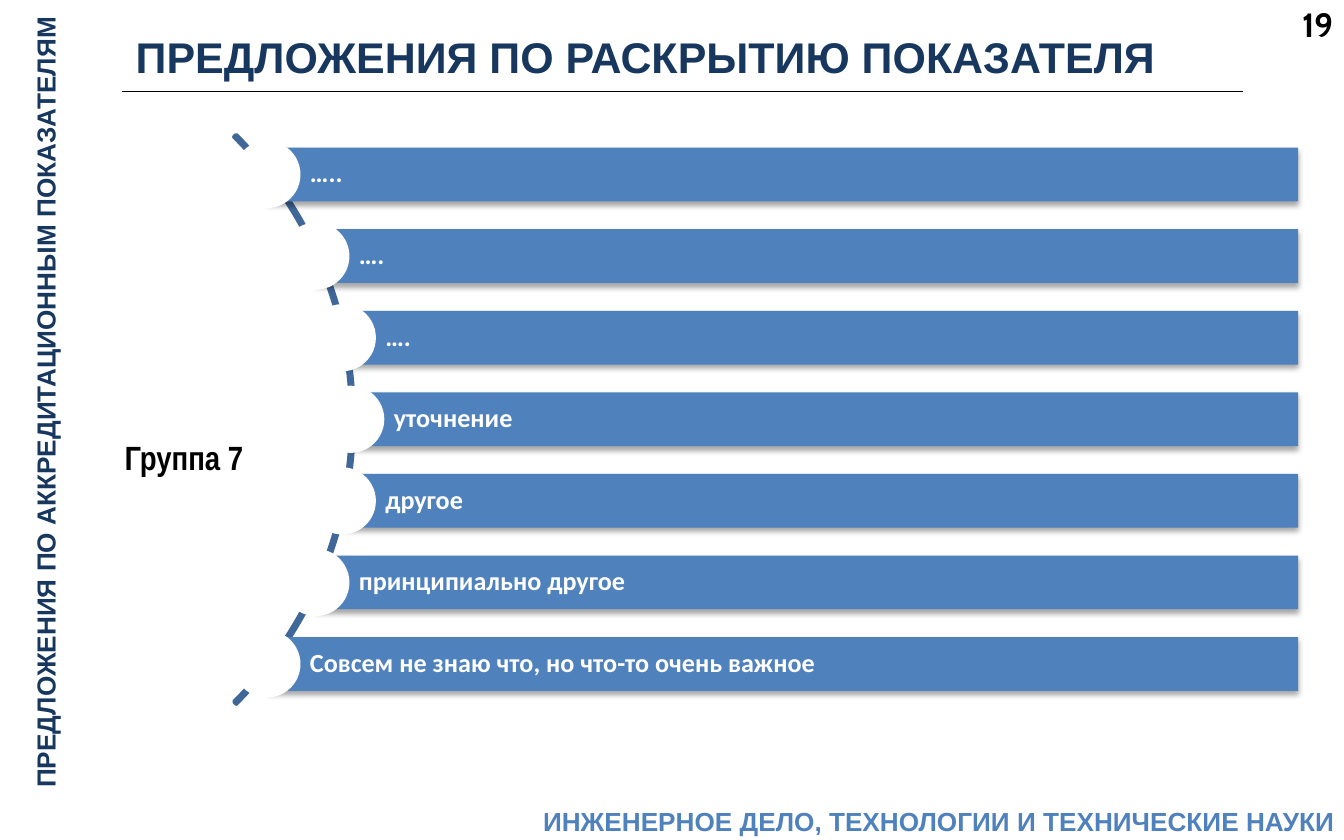
import math

from lxml import etree
from pptx import Presentation
from pptx.dml.color import RGBColor
from pptx.enum.shapes import MSO_CONNECTOR, MSO_SHAPE
from pptx.enum.text import MSO_ANCHOR, MSO_AUTO_SIZE, PP_ALIGN
from pptx.oxml import parse_xml
from pptx.oxml.ns import nsdecls, qn
from pptx.util import Inches, Pt

STRAIGHT = MSO_CONNECTOR.STRAIGHT
RECT, OVAL, BLOCK_ARC = MSO_SHAPE.RECTANGLE, MSO_SHAPE.OVAL, MSO_SHAPE.BLOCK_ARC
MIDDLE = MSO_ANCHOR.MIDDLE
NO_AUTOFIT = MSO_AUTO_SIZE.NONE
LEFT, CENTER, RIGHT = PP_ALIGN.LEFT, PP_ALIGN.CENTER, PP_ALIGN.RIGHT

COLORS = {"navy": "17375E", "blue": "4F81BD", "arc": "3F6797",
          "white": "FFFFFF", "black": "000000"}

ITEMS = ["…..", "….", "….", "уточнение", "другое", "принципиально другое",
         "Совсем не знаю что, но что-то очень важное"]

ARC_X, ARC_Y, ARC_SIZE = -0.36, 3.12, 5.99
NODE_RADIUS = 2.97  # distance from the arc centre to the circle centres
STEP = 0.607
BAR_RIGHT, BAR_HEIGHT, CIRCLE = 9.66, 0.4, 0.5


def rgb(name):
    return RGBColor.from_string(COLORS[name])


class SlideBuilder:
    """Holds the text style and the current slide."""

    font = "Arial"

    def __init__(self, slide):
        self.slide = slide

    def set_text(self, tf, text, size, color, align=LEFT, font=None):
        tf.text = text
        p = tf.paragraphs[0]
        p.alignment = align
        r = p.runs[0]
        r.font.name = font or self.font
        r.font.size = Pt(size)
        r.font.bold = True
        r.font.color.rgb = rgb(color)
        return r

    def title(self, text, box):
        sp = self.slide.shapes.title
        sp.left, sp.top, sp.width, sp.height = map(Inches, box)
        tf = sp.text_frame
        tf.auto_size = NO_AUTOFIT
        tf.vertical_anchor = MIDDLE
        self.set_text(tf, text, 23, "navy")

    def label(self, text, box, size, color, align=LEFT, font=None, rotation=0):
        sp = self.slide.shapes.add_textbox(*map(Inches, box))
        sp.rotation = rotation
        sp.text_frame.word_wrap = True
        return self.set_text(sp.text_frame, text, size, color, align, font)

    def outline(self, r, fill_alpha=None):
        """Give the letters a blue outline, over a fill that may be see-through."""
        rPr = r.font._element
        rPr.insert(0, parse_xml(
            f'<a:ln {nsdecls("a")} w="10160"><a:solidFill>'
            f'<a:srgbClr val="{COLORS["blue"]}"/></a:solidFill></a:ln>'))
        if fill_alpha is not None:
            clr = rPr.find(qn("a:solidFill")).find(qn("a:srgbClr"))
            etree.SubElement(clr, qn("a:alpha"), val=str(fill_alpha * 1000))

    def rule(self, x1, x2, y):
        line = self.slide.shapes.add_connector(
            STRAIGHT, Inches(x1), Inches(y), Inches(x2), Inches(y))
        line.line.color.rgb = rgb("black")
        line.line.width = Pt(0.75)
        etree.SubElement(line._element.spPr, qn("a:effectLst"))

    def shape(self, kind, box, fill=None):
        sp = self.slide.shapes.add_shape(kind, *map(Inches, box))
        sp.shadow.inherit = False
        sp.line.fill.background()
        if fill:
            sp.fill.solid()
            sp.fill.fore_color.rgb = rgb(fill)
        else:
            sp.fill.background()
        return sp

    def arc(self, x, y, size):
        sp = self.shape(BLOCK_ARC, (x - size / 2, y - size / 2, size, size))
        for i, value in enumerate((189, 27, 0.004)):
            sp.adjustments[i] = value
        sp.line.color.rgb = rgb("arc")
        sp.line.width = Pt(2)

    def drop_shadow(self, sp):
        sp._element.spPr.find(qn("a:effectLst")).append(parse_xml(
            f'<a:outerShdw {nsdecls("a")} blurRad="{Pt(3.1)}" dist="{Pt(1.8)}" '
            f'dir="5400000" rotWithShape="0"><a:srgbClr val="{COLORS["black"]}">'
            '<a:alpha val="35000"/></a:srgbClr></a:outerShdw>'))

    def bar(self, text, x, y):
        """Draw a bar that starts at x, centred on y, with a circle on its end."""
        sp = self.shape(
            RECT, (x, y - BAR_HEIGHT / 2, BAR_RIGHT - x, BAR_HEIGHT), "blue")
        self.drop_shadow(sp)
        tf = sp.text_frame
        tf.margin_left = Inches(0.32)
        tf.margin_top = tf.margin_right = tf.margin_bottom = Inches(0.04)
        tf.vertical_anchor = MIDDLE
        self.set_text(tf, text, 14, "white", font="Calibri")
        tf.paragraphs[0].line_spacing = 0.9
        self.shape(OVAL, (x - CIRCLE / 2, y - CIRCLE / 2, CIRCLE, CIRCLE), "white")


def main():
    prs = Presentation()
    prs.slide_width, prs.slide_height = Inches(10), Inches(6.25)
    s = SlideBuilder(prs.slides.add_slide(prs.slide_layouts[5]))

    s.label("19", (9.49, -0.02, 0.63, 0.33), 18, "black", CENTER, "Cabin")
    s.rule(9.25, 0.91, 0.68)
    footer = s.label("ИНЖЕНЕРНОЕ ДЕЛО, ТЕХНОЛОГИИ И ТЕХНИЧЕСКИЕ НАУКИ",
                     (3.44, 5.94, 6.59, 0.34), 14, "white", RIGHT)
    s.outline(footer, fill_alpha=5)
    side = s.label("ПРЕДЛОЖЕНИЯ ПО АККРЕДИТАЦИОННЫМ ПОКАЗАТЕЛЯМ",
                   (-2.65, 2.8, 5.98, 0.34), 14, "navy", rotation=270)
    s.outline(side)
    s.title("ПРЕДЛОЖЕНИЯ ПО РАСКРЫТИЮ ПОКАЗАТЕЛЯ", (0.91, 0.19, 8.03, 0.46))
    s.label("Группа 7", (0.83, 3.2, 1.34, 0.4), 18, "black", font="Arial Narrow")

    s.arc(ARC_X, ARC_Y, ARC_SIZE)
    for i, text in enumerate(ITEMS):
        dy = (i - len(ITEMS) // 2) * STEP
        s.bar(text, ARC_X + math.sqrt(NODE_RADIUS ** 2 - dy ** 2), ARC_Y + dy)

    prs.save("out.pptx")


if __name__ == "__main__":
    main()
